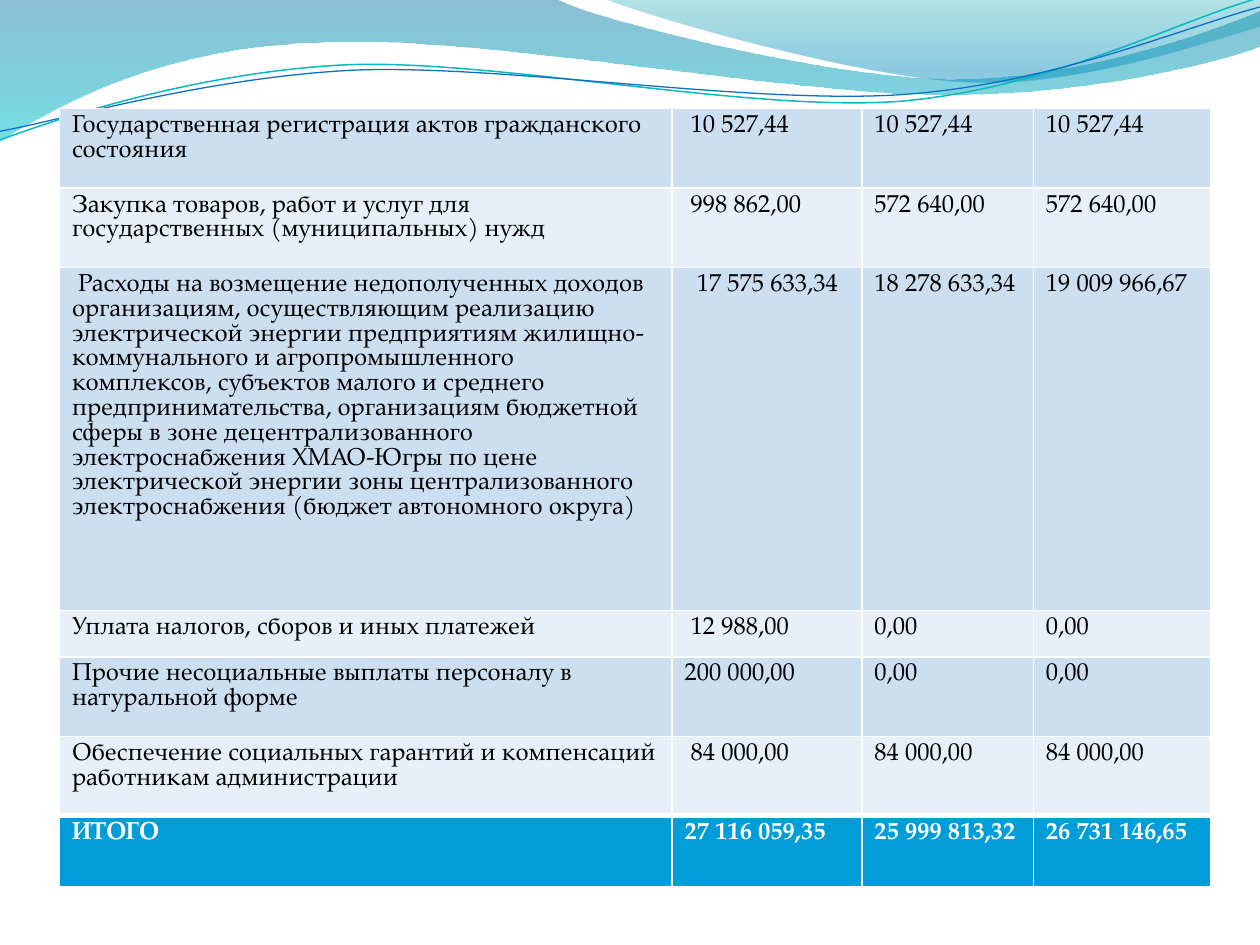
"""Build a slide with a budget expenses table under a wave header."""
import lxml.etree
import pptx
import pptx.dml.color
import pptx.oxml.ns
import pptx.util

Pt = pptx.util.Pt
qn = pptx.oxml.ns.qn
FONT = "TeX Gyre Pagella"


def rgb(value):
    return pptx.dml.color.RGBColor.from_string(value)


def add_wave(page, start, steps, closed):
    points = [pair for step in steps for pair in zip(step[::2], step[1::2])]
    builder = page.shapes.build_freeform(*start, scale=Pt(1))
    builder.add_line_segments(points, close=closed)
    wave = builder.convert_to_shape()
    wave.shadow.inherit = False
    segments = iter(list(wave._element.iter(qn("a:lnTo"))))
    for step in steps:
        first = next(segments)
        if len(step) == 6:
            curve = lxml.etree.Element(qn("a:cubicBezTo"))
            first.addprevious(curve)
            for segment in (first, next(segments), next(segments)):
                curve.append(segment[0])
                segment.getparent().remove(segment)
    return wave


deck = pptx.Presentation()
deck.slide_width, deck.slide_height = Pt(720), Pt(540)
page = deck.slides.add_slide(deck.slide_layouts[6])

bands = [
    ((0, 0), [(316.8, -0.7), (342.7, 12.2, 478.1, 45.4, 545.8, 45.4),
              (614.2, 45.4, 689.8, 18.7, 720, 6.5), (720.7, 25.9),
              (707.8, 31.7, 626.4, 54.7, 537.1, 54), (447.8, 54, 275, 20.2, 185, 24.5),
              (92.9, 25.9, 33.1, 59.8, -0.7, 81.4)],
     [(0, "0074A1", 45), (1, "00C6CF", 55)]),
    ((344.9, -0.7), [(366.5, 7.9, 491, 44.6, 553.7, 46.8),
                     (616.3, 49.7, 691.9, 23, 720, 15.1), (720, 0)],
     [(0, "00A1A9", 30), (0.8, "008BBF", 45)]),
]
for start, steps, stops in bands:
    band = add_wave(page, start, steps, True)
    band.line.fill.background()
    band.fill.gradient()
    band.fill.gradient_angle = 270
    for stop, (position, color, opacity) in zip(band.fill.gradient_stops, stops):
        stop.position = position
        stop.color.rgb = rgb(color)
    for tag, (position, color, opacity) in zip(band._element.spPr.iter(qn("a:srgbClr")), stops):
        lxml.etree.SubElement(tag, qn("a:alpha"), val=str(opacity * 1000))

threads = [
    ((0, 79.9), [(34.6, 67, 113.8, 41, 199.4, 37.4), (284.4, 33.8, 427, 64.1, 513.4, 57.6),
                 (599.8, 51.1, 675.4, 10.8, 718.6, -1.4)], "0AB8BF", 0.85),
    ((0, 74.9), [(33.8, 69.1, 118.1, 43.9, 203.8, 40.3), (290.2, 36.7, 429.8, 60.5, 516.2, 54),
                 (601.9, 48.2, 677.5, 15.1, 720, 4.3)], "0F6FC6", 0.75),
]
for start, steps, color, width in threads:
    thread = add_wave(page, start, steps, False)
    thread.fill.background()
    thread.line.color.rgb = rgb(color)
    thread.line.width = Pt(width)

rows = [
    ("Государственная регистрация актов гражданского состояния",
     " 10 527,44", "10 527,44", "10 527,44"),
    ("Закупка товаров, работ и услуг для государственных (муниципальных) нужд",
     " 998 862,00", "572 640,00", "572 640,00"),
    (" Расходы на возмещение недополученных доходов организациям, осуществляющим реализацию "
     "электрической энергии предприятиям жилищно-коммунального и агропромышленного комплексов, "
     "субъектов малого и среднего предпринимательства, организациям бюджетной сферы в зоне "
     "децентрализованного электроснабжения ХМАО-Югры по цене электрической энергии зоны "
     "централизованного электроснабжения (бюджет автономного округа)",
     " 17 575 633,34", "18 278 633,34", "19 009 966,67"),
    ("Уплата налогов, сборов и иных платежей", " 12 988,00", "0,00", "0,00"),
    ("Прочие несоциальные выплаты персоналу в натуральной форме", "200 000,00", "0,00", "0,00"),
    ("Обеспечение социальных гарантий и компенсаций работникам администрации",
     " 84 000,00", "84 000,00", "84 000,00"),
    ("ИТОГО", "27 116 059,35", "25 999 813,32", "26 731 146,65"),
]
widths = [350, 108.5, 98, 101.5]
heights = [45.4, 45.4, 196, 26.6, 45.4, 45.4, 40.8]
frame = page.shapes.add_table(len(rows), len(widths), Pt(34), Pt(62), Pt(sum(widths)), Pt(sum(heights)))
table = frame.table
for column, width in zip(table.columns, widths):
    column.width = Pt(width)
for r, (texts, height) in enumerate(zip(rows, heights)):
    table.rows[r].height = Pt(height)
    total = r == len(rows) - 1
    for c, text in enumerate(texts):
        cell = table.cell(r, c)
        cell.margin_left = cell.margin_right = Pt(7.2)
        cell.margin_top = cell.margin_bottom = Pt(3.6)
        for side in "LRTB":
            thick = (total and side == "T") or (r == len(rows) - 2 and side == "B")
            border = lxml.etree.SubElement(cell._tc.get_or_add_tcPr(), qn("a:ln" + side),
                                           w=str(Pt(3 if thick else 1)))
            paint = lxml.etree.SubElement(border, qn("a:solidFill"))
            lxml.etree.SubElement(paint, qn("a:srgbClr"), val="FFFFFF")
        cell.fill.solid()
        cell.fill.fore_color.rgb = rgb("009DD9" if total else ("CCDFF1", "E7EFF8")[r % 2])
        cell.text_frame.text = text
        span = cell.text_frame.paragraphs[0].runs[0]
        span.font.name = FONT
        span.font.size = Pt(14)
        span.font.bold = total
        span.font.color.rgb = rgb("FFFFFF" if total else "000000")
table.cell(2, 1).margin_left = Pt(10.7)

deck.save("out.pptx")
